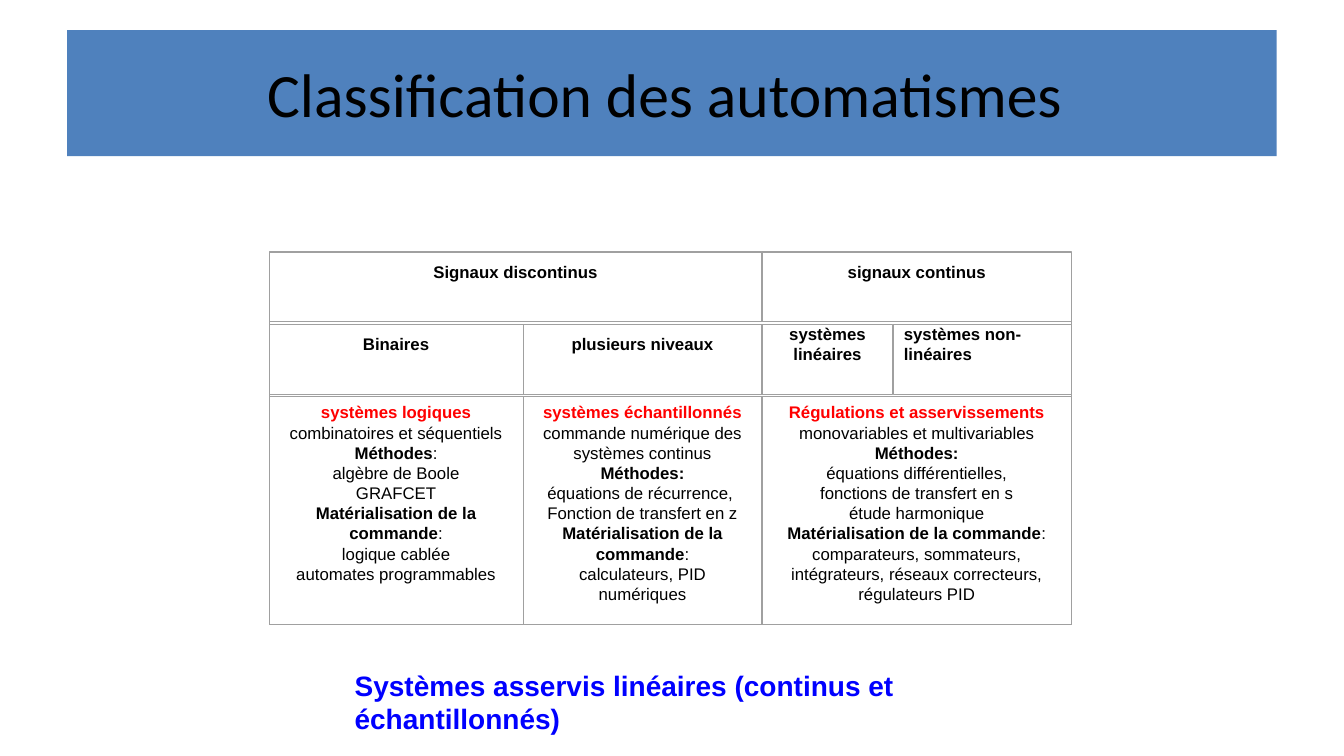
import pptx
import pptx.dml.color
import pptx.enum.shapes
import pptx.enum.text
import pptx.util

Pt = pptx.util.Pt
RGBColor = pptx.dml.color.RGBColor
ALIGN = pptx.enum.text.PP_ALIGN
ANCHOR = pptx.enum.text.MSO_ANCHOR
RECTANGLE = pptx.enum.shapes.MSO_SHAPE.RECTANGLE

BLACK = RGBColor(0x00, 0x00, 0x00)
RED = RGBColor(0xFF, 0x00, 0x00)
BLUE = RGBColor(0x00, 0x00, 0xFF)
BANNER = RGBColor(0x4F, 0x81, 0xBD)
GRID = RGBColor(0xA0, 0xA0, 0xA0)

# Run styles: colour, bold
PLAIN = (BLACK, False)
BOLD = (BLACK, True)
KEY = (RED, True)
NOTE = (BLUE, True)


class SlideBuilder:
    def __init__(self, slide, font="Arial", size=12):
        self.slide = slide
        self.font = font
        self.size = size

    def add_text(self, frame, paragraphs, align, size=None, font=None):
        """Each paragraph is a list of (text, style); a newline is a line break."""
        frame.word_wrap = True
        for index, runs in enumerate(paragraphs):
            paragraph = frame.add_paragraph() if index else frame.paragraphs[0]
            paragraph.alignment = align
            for text, (colour, bold) in runs:
                for number, line in enumerate(text.split("\n")):
                    if number:
                        paragraph.add_line_break()
                    if line:
                        run = paragraph.add_run()
                        run.text = line
                        run.font.name = font or self.font
                        run.font.size = Pt(size or self.size)
                        run.font.bold = bold
                        run.font.color.rgb = colour

    def box(self, left, top, width, height, fill=None, line=None, weight=0):
        shape = self.slide.shapes.add_shape(
            RECTANGLE, Pt(left), Pt(top), Pt(width), Pt(height))
        shape.shadow.inherit = False
        if fill is None:
            shape.fill.background()
        else:
            shape.fill.solid()
            shape.fill.fore_color.rgb = fill
        if line is None:
            shape.line.fill.background()
        else:
            shape.line.color.rgb = line
            shape.line.width = Pt(weight)
        return shape

    def title(self, text, left, top, width, height):
        frame = self.box(left, top, width, height, fill=BANNER).text_frame
        frame.vertical_anchor = ANCHOR.MIDDLE
        self.add_text(frame, [[(text, PLAIN)]], ALIGN.CENTER, 44, "Calibri")

    def cell(self, bounds, paragraphs, anchor, bottom, align=ALIGN.CENTER):
        frame = self.box(*bounds, line=GRID).text_frame
        frame.vertical_anchor = anchor
        frame.margin_left = frame.margin_right = Pt(7.7)
        frame.margin_top = Pt(4.3 if anchor == ANCHOR.TOP else 0)
        frame.margin_bottom = Pt(bottom)
        self.add_text(frame, paragraphs, align)

    def caption(self, text, left, top, width, height):
        frame = self.slide.shapes.add_textbox(
            Pt(left), Pt(top), Pt(width), Pt(height)).text_frame
        self.add_text(frame, [[(text, NOTE)]], ALIGN.LEFT, 20)


# Grid: column edges, then top and height of each row
EDGES = [192.2, 373.7, 544.3, 637.9, 765.4]
ROWS = [(180, 49.7), (231.8, 49.7), (283, 163.4)]

# Headings: row, first edge, last edge, text, alignment
HEADINGS = [
    (0, 0, 2, "Signaux discontinus", ALIGN.CENTER),
    (0, 2, 4, "signaux continus", ALIGN.CENTER),
    (1, 0, 1, "Binaires", ALIGN.CENTER),
    (1, 1, 2, "plusieurs niveaux", ALIGN.CENTER),
    (1, 2, 3, "systèmes linéaires", ALIGN.CENTER),
    (1, 3, 4, "systèmes non-linéaires", ALIGN.LEFT),
]

CONTROL = ("Matérialisation de la commande", BOLD)

# Details: first edge, last edge, paragraphs
DETAILS = [
    (0, 1, [
        [("systèmes logiques\n", KEY), ("combinatoires et séquentiels", PLAIN)],
        [("Méthodes", BOLD), (":\nalgèbre de Boole\nGRAFCET", PLAIN)],
        [CONTROL, (":\nlogique cablée\nautomates programmables", PLAIN)],
    ]),
    (1, 2, [
        [("systèmes échantillonnés\n", KEY),
         ("commande numérique des systèmes continus", PLAIN)],
        [("Méthodes:\n", BOLD), ("équations de récurrence, ", PLAIN)],
        [("Fonction de transfert en z", PLAIN)],
        [CONTROL, (":\ncalculateurs, PID numériques", PLAIN)],
    ]),
    (2, 4, [
        [("Régulations et asservissements\n", KEY),
         ("monovariables et multivariables", PLAIN)],
        [("Méthodes:\n", BOLD), ("équations différentielles,", PLAIN)],
        [("fonctions de transfert en s", PLAIN)],
        [("étude harmonique", PLAIN)],
        [CONTROL, (":\ncomparateurs, sommateurs, intégrateurs, "
                   "réseaux correcteurs, régulateurs PID", PLAIN)],
    ]),
]


def cell_bounds(row, first, last):
    top, height = ROWS[row]
    return EDGES[first], top, EDGES[last] - EDGES[first], height


def main():
    deck = pptx.Presentation()
    deck.slide_width, deck.slide_height = Pt(960), Pt(540)
    builder = SlideBuilder(deck.slides.add_slide(deck.slide_layouts[6]))

    # Title banner
    builder.title("Classification des automatismes ", 48, 21.6, 864, 90)

    # Classification grid
    for row, first, last, text, align in HEADINGS:
        builder.cell(cell_bounds(row, first, last), [[(text, BOLD)]],
                     ANCHOR.MIDDLE, 22, align)
    for first, last, paragraphs in DETAILS:
        builder.cell(cell_bounds(2, first, last), paragraphs, ANCHOR.TOP, 4.3)

    # Outer frame
    frame_top = ROWS[0][0]
    frame_bottom = sum(ROWS[-1])
    builder.box(EDGES[0], frame_top, EDGES[-1] - EDGES[0],
                frame_bottom - frame_top, line=GRID, weight=0.62)

    # Conclusion
    builder.caption("Systèmes asservis linéaires (continus et échantillonnés)",
                    246.2, 473.8, 486, 55.4)

    deck.save("out.pptx")


if __name__ == "__main__":
    main()
